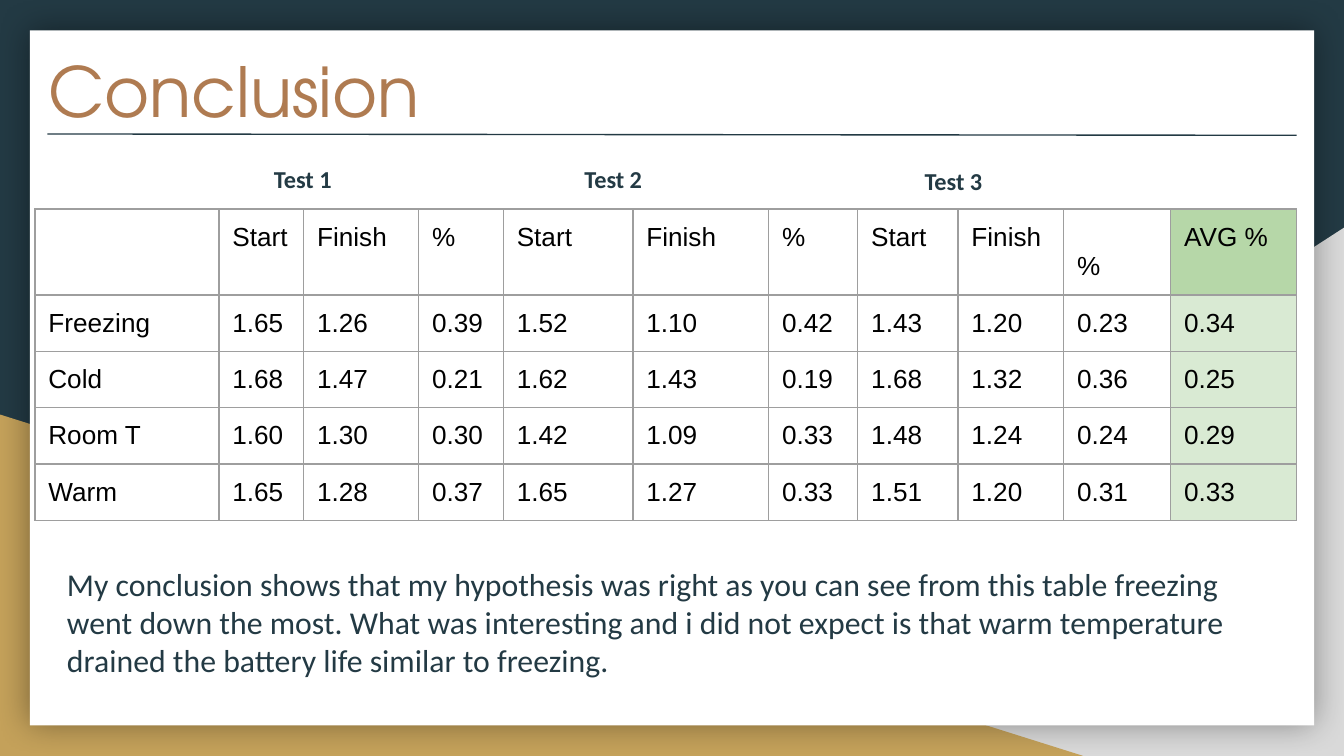
from lxml import etree
from pptx import Presentation
from pptx.dml.color import RGBColor
from pptx.enum.shapes import MSO_CONNECTOR, MSO_SHAPE
from pptx.enum.text import MSO_ANCHOR, MSO_AUTO_SIZE, PP_ALIGN
from pptx.oxml import parse_xml
from pptx.oxml.ns import nsdecls, qn
from pptx.util import Pt

RECT, TRIANGLE = MSO_SHAPE.RECTANGLE, MSO_SHAPE.RIGHT_TRIANGLE
STRAIGHT = MSO_CONNECTOR.STRAIGHT
TOP, LEFT, NO_FIT = MSO_ANCHOR.TOP, PP_ALIGN.LEFT, MSO_AUTO_SIZE.NONE
INSET = 7.2
LINE_STEP = 16
COLORS = {
    "navy": "233A44", "gray": "D9D9D9", "gold": "C4A15A", "white": "FFFFFF",
    "copper": "AF7B51", "black": "000000", "grid": "9E9E9E",
    "avg_head": "B6D7A8", "avg": "D9EAD3",
}
COLUMNS = [98.6, 45.4, 61.6, 45.4, 69.4, 72.7, 47.8, 53.7, 56.6, 57.4, 67.4]
ROWS = [45.8] + [30.2] * 4
DATA = [
    [""] + ["Start", "Finish", "%"] * 3 + ["AVG %"],
    "Freezing|1.65|1.26|0.39|1.52|1.10|0.42|1.43|1.20|0.23|0.34".split("|"),
    "Cold|1.68|1.47|0.21|1.62|1.43|0.19|1.68|1.32|0.36|0.25".split("|"),
    "Room T|1.60|1.30|0.30|1.42|1.09|0.33|1.48|1.24|0.24|0.29".split("|"),
    "Warm|1.65|1.28|0.37|1.65|1.27|0.33|1.51|1.20|0.31|0.33".split("|"),
]
TEST_LABELS = {
    "Test 1": (139.7, 80.6, 90, 26.6),
    "Test 2": (306, 80.6, 82, 29.5),
    "Test 3": (488.2, 82.1, 75.6, 26.6),
}
CONCLUSION = (
    "My conclusion shows that my hypothesis was right as you can see from this "
    "table freezing went down the most. What was interesting and i did not expect "
    "is that warm temperature drained the battery life similar to freezing."
)


def rgb(name):
    """Return the palette colour of that name."""
    return RGBColor.from_string(COLORS[name])


def write(tf, text, font, size, color, bold=False):
    """Write one left-aligned run into a text frame."""
    p = tf.paragraphs[0]
    p.alignment = LEFT
    r = p.add_run()
    r.text = text
    r.font.name, r.font.size, r.font.bold = font, Pt(size), bold
    r.font.color.rgb = rgb(color)


def frame_text(sp, *style):
    """Set up a wrapping, top-anchored frame and write its text."""
    tf = sp.text_frame
    tf.word_wrap, tf.auto_size, tf.vertical_anchor = True, NO_FIT, TOP
    tf.margin_left = tf.margin_right = tf.margin_top = tf.margin_bottom = Pt(INSET)
    write(tf, *style)


def add_shape(s, kind, box, color):
    """Add a plain filled shape without outline."""
    sp = s.shapes.add_shape(kind, *map(Pt, box))
    sp.shadow.inherit = False
    sp.fill.solid()
    sp.fill.fore_color.rgb = rgb(color)
    sp.line.fill.background()
    return sp


def add_backdrop(s, width, height):
    """Place the dark background, corner triangles and white card."""
    s.background.fill.solid()
    s.background.fill.fore_color.rgb = rgb("navy")
    right = add_shape(s, TRIANGLE, (width - 437.8, height - 283, 437.8, 283), "gray")
    right._element.spPr.find(qn("a:xfrm")).set("flipH", "1")
    add_shape(s, TRIANGLE, (0, height - 182.9, 580.3, 182.9), "gold")
    card = add_shape(s, RECT, (16, 16.2, width - 32, 372.4), "white")
    effects = card._element.spPr.find(qn("a:effectLst"))
    effects.append(parse_xml(
        f'<a:outerShdw {nsdecls("a")} blurRad="{Pt(18)}" dist="0" algn="ctr" '
        f'rotWithShape="0"><a:srgbClr val="{COLORS["black"]}">'
        '<a:alpha val="40000"/></a:srgbClr></a:outerShdw>'))


def add_heading(s, box):
    """Place the title and the rule below it."""
    title = s.shapes.title
    title.left, title.top, title.width, title.height = map(Pt, box)
    frame_text(title, "Conclusion", "TeX Gyre Adventor", 37, "copper")
    rule = s.shapes.add_connector(STRAIGHT, Pt(25.4), Pt(71.8), Pt(694.6), Pt(72.5))
    rule.line.color.rgb = rgb("navy")
    rule.line.width = Pt(0.75)
    etree.SubElement(rule._element.spPr, qn("a:effectLst"))


def add_borders(cell):
    """Draw the thin grid line on all four sides of a cell."""
    tc_pr = cell._tc.get_or_add_tcPr()
    for i, side in enumerate(("lnL", "lnR", "lnT", "lnB")):
        tc_pr.insert(i, parse_xml(
            f'<a:{side} {nsdecls("a")} w="{Pt(0.75)}"><a:solidFill>'
            f'<a:srgbClr val="{COLORS["grid"]}"/></a:solidFill></a:{side}>'))


def add_results(s, left, top):
    """Place the table of readings with its highlighted average column."""
    box = map(Pt, (left, top, sum(COLUMNS), sum(ROWS)))
    table = s.shapes.add_table(len(ROWS), len(COLUMNS), *box).table
    table.first_row = table.horz_banding = False
    for column, width in zip(table.columns, COLUMNS):
        column.width = Pt(width)
    last = len(COLUMNS) - 1
    for i, (row, values) in enumerate(zip(table.rows, DATA)):
        row.height = Pt(ROWS[i])
        for j, (cell, value) in enumerate(zip(row.cells, values)):
            lowered = i == 0 and j == last - 1
            cell.margin_left = cell.margin_right = cell.margin_bottom = Pt(INSET)
            cell.margin_top = Pt(INSET + LINE_STEP * lowered)
            if j == last or lowered:
                fill = "white" if lowered else "avg" if i else "avg_head"
                cell.fill.solid()
                cell.fill.fore_color.rgb = rgb(fill)
            else:
                cell.fill.background()
            add_borders(cell)
            if value:
                write(cell.text_frame, value, "Arial", 14, "black")


def add_text(s, box, text, size, bold=False):
    """Place a text box in the body font."""
    sp = s.shapes.add_textbox(*map(Pt, box))
    frame_text(sp, text, "Calibri", size, "navy", bold)


def main():
    """Build and save the slide."""
    prs = Presentation()
    prs.slide_width, prs.slide_height = Pt(720), Pt(405)
    s = prs.slides.add_slide(prs.slide_layouts[5])
    add_backdrop(s, 720, 405)
    title = s.shapes.title._element
    s.shapes._spTree.append(title)
    add_heading(s, (18.7, 18.7, 591, 74.9))
    add_results(s, 18.7, 111.9)
    for label, box in TEST_LABELS.items():
        add_text(s, box, label, 13, True)
    add_text(s, (28.8, 295.2, 666, 85.7), CONCLUSION, 17)
    prs.save("out.pptx")


if __name__ == "__main__":
    main()
